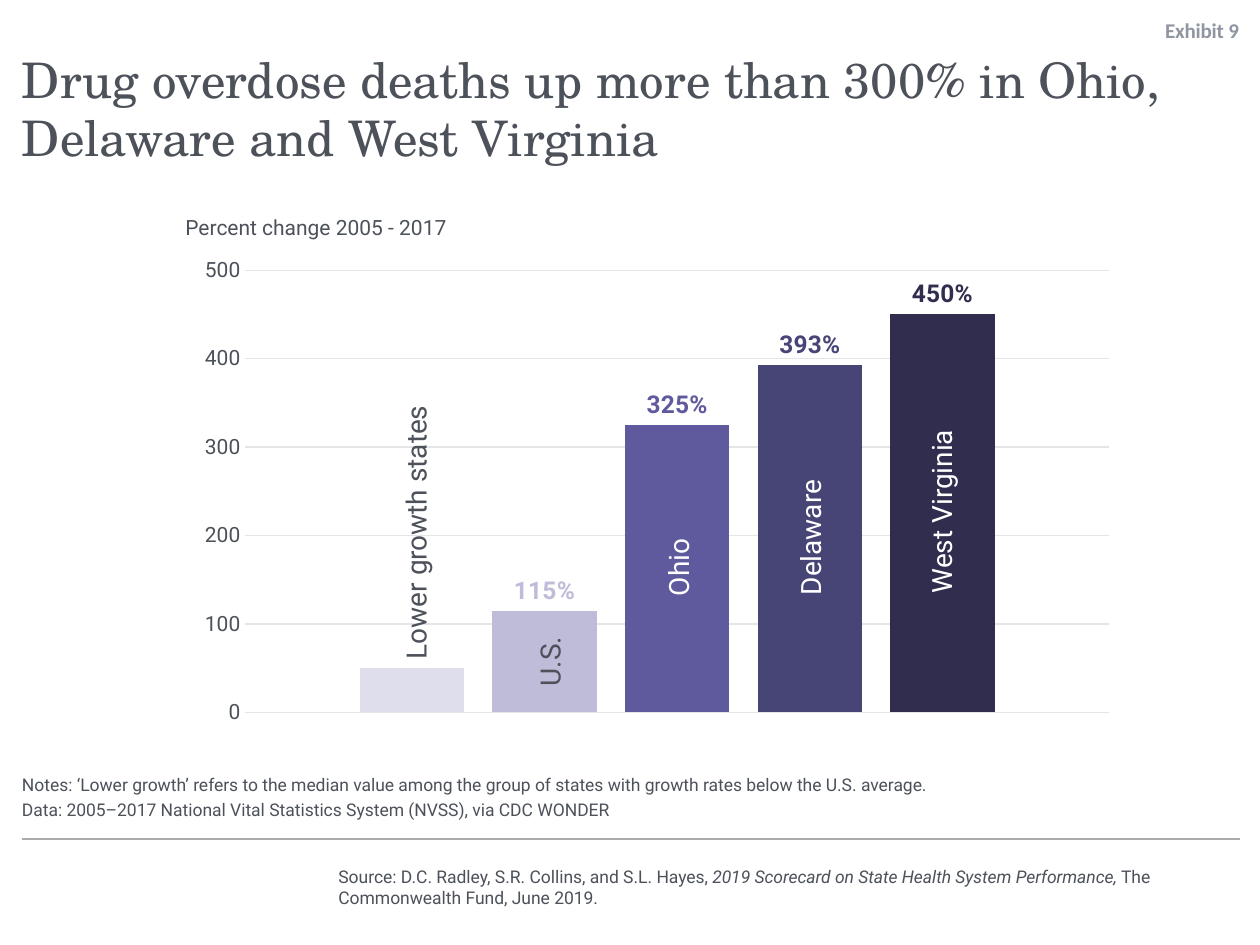
from dataclasses import dataclass

from lxml.etree import SubElement
from pptx import Presentation
from pptx.chart.data import CategoryChartData
from pptx.dml.color import RGBColor
from pptx.enum.chart import XL_CHART_TYPE as ChartType
from pptx.enum.chart import XL_LABEL_POSITION as LabelPosition
from pptx.enum.chart import XL_TICK_MARK as TickMark
from pptx.enum.shapes import MSO_CONNECTOR as Connector
from pptx.enum.text import MSO_ANCHOR as Anchor
from pptx.enum.text import PP_ALIGN as Align
from pptx.oxml.ns import qn
from pptx.util import Emu, Pt

PX_PER_INCH = 126
INK = "4C515A"
WHITE = "FFFFFF"
BODY_FONT = "Roboto"


@dataclass(frozen=True)
class Box:
    left: int
    top: int
    width: int
    height: int


@dataclass(frozen=True)
class Style:
    size: int
    color: str = INK
    font: str = BODY_FONT
    bold: bool = False
    spacing: int = 0  # hundredths of a point


@dataclass(frozen=True)
class Bar:
    value: int
    color: str
    labelled: bool = True


@dataclass(frozen=True)
class BarName:
    text: str
    box: Box
    color: str = WHITE
    align: Align = Align.CENTER


BARS = [
    Bar(50, "DFDEEC", labelled=False),
    Bar(115, "BEBCD9"),
    Bar(325, "5F5A9D"),
    Bar(393, "474476"),
    Bar(450, "302D4E"),
]
BAR_NAMES = [
    BarName("Delaware", Box(636, 514, 349, 47)),
    BarName("West Virginia", Box(741, 488, 401, 47)),
    BarName("U.S.", Box(499, 638, 102, 47), INK),
    BarName("Ohio", Box(534, 544, 289, 47)),
    BarName("Lower growth states", Box(261, 493, 310, 47), INK, Align.LEFT),
]


def px(length: int) -> Emu:
    return Emu(round(length * 914400 / PX_PER_INCH))


def rgb(color: str) -> RGBColor:
    return RGBColor.from_string(color)


def style_font(font, style: Style) -> None:
    font.size = Pt(style.size)
    font.name = style.font
    font.bold = style.bold
    font.color.rgb = rgb(style.color)


def add_text(slide, box: Box, paragraphs, style: Style, align=Align.LEFT,
             anchor=Anchor.TOP, inset=True, gap=0, rotation=0) -> None:
    """Add a text box; each paragraph is a list of (text, italic) runs."""
    shape = slide.shapes.add_textbox(
        px(box.left), px(box.top), px(box.width), px(box.height))
    shape.rotation = rotation
    frame = shape.text_frame
    frame.word_wrap = True
    frame.vertical_anchor = anchor
    if not inset:
        frame.margin_left = frame.margin_right = 0
        frame.margin_top = frame.margin_bottom = 0
    for index, runs in enumerate(paragraphs):
        paragraph = frame.add_paragraph() if index else frame.paragraphs[0]
        paragraph.alignment = align
        paragraph.space_before = Pt(gap if index else 0)
        for text, italic in runs:
            run = paragraph.add_run()
            run.text = text
            style_font(run.font, style)
            run.font.italic = italic
            if style.spacing:
                run.font._element.set("spc", str(style.spacing))


def add_rule(slide, left: int, right: int, y: int) -> None:
    rule = slide.shapes.add_connector(
        Connector.STRAIGHT, px(right), px(y), px(left), px(y))
    rule.line.color.rgb = rgb("ABABAB")
    rule.line.width = Pt(0.75)
    SubElement(rule._element.spPr, qn("a:effectLst"))


def fix_plot_area(chart, **fractions: float) -> None:
    """Set the inner plot area as fractions of the chart frame."""
    plot_area = chart._chartSpace.chart.plotArea
    layout = plot_area.find(qn("c:layout"))
    if layout is None:
        layout = SubElement(plot_area, qn("c:layout"))
        plot_area.insert(0, layout)
    manual = SubElement(layout, qn("c:manualLayout"))
    settings = {"layoutTarget": "inner", "xMode": "edge", "yMode": "edge", **fractions}
    for tag, value in settings.items():
        SubElement(manual, qn(f"c:{tag}")).set("val", str(value))


def add_bar_chart(slide, box: Box, bars: list[Bar]) -> None:
    data = CategoryChartData()
    data.categories = ["1"]
    for number, bar in enumerate(bars, 1):
        data.add_series(f"Series {number}", [bar.value])
    chart = slide.shapes.add_chart(
        ChartType.COLUMN_CLUSTERED, px(box.left), px(box.top),
        px(box.width), px(box.height), data).chart
    chart.has_legend = False
    chart.has_title = False
    style_font(chart.font, Style(10))
    fix_plot_area(chart, x=0.06, y=0.05, w=0.92, h=0.91)

    chart.category_axis.visible = False
    axis = chart.value_axis
    axis.minimum_scale, axis.maximum_scale, axis.major_unit = 0, 500, 100
    axis.major_tick_mark = axis.minor_tick_mark = TickMark.NONE
    axis.format.line.fill.background()
    axis.major_gridlines.format.line.color.rgb = rgb("E3E5E7")
    axis.major_gridlines.format.line.width = Pt(0.75)
    style_font(axis.tick_labels.font, Style(12))

    plot = chart.plots[0]
    plot.vary_by_categories = False
    plot.gap_width, plot.overlap = 219, -27
    for series, bar in zip(plot.series, bars):
        series.format.fill.solid()
        series.format.fill.fore_color.rgb = rgb(bar.color)
        if bar.labelled:
            labels = series.data_labels
            labels.show_value = True
            labels.position = LabelPosition.OUTSIDE_END
            labels.number_format = '0"%"'
            labels.number_format_is_linked = False
            style_font(labels.font, Style(14, bar.color, bold=True))


def main() -> None:
    presentation = Presentation()
    presentation.slide_width = px(1260)
    presentation.slide_height = px(945)
    slide = presentation.slides.add_slide(presentation.slide_layouts[6])

    add_rule(slide, 22, 1240, 839)
    source = [("Source: D.C. Radley, S.R. Collins, and S.L. Hayes, ", False),
              ("2019 Scorecard on State Health System Performance, ", True),
              ("The Commonwealth Fund, June 2019.", False)]
    add_text(slide, Box(326, 859, 914, 56), [source], Style(10), anchor=Anchor.MIDDLE)
    title = "Drug overdose deaths up more than 300% in Ohio, Delaware and West Virginia"
    add_text(slide, Box(22, 49, 1218, 131), [[(title, False)]],
             Style(28, font="TeX Gyre Schola"), inset=False)
    notes = ["Notes: ‘Lower growth’ refers to the median value among the group of "
             "states with growth rates below the U.S. average.",
             "Data: 2005–2017 National Vital Statistics System (NVSS), via CDC WONDER"]
    add_text(slide, Box(22, 765, 1218, 55), [[(note, False)] for note in notes],
             Style(10), anchor=Anchor.BOTTOM, inset=False, gap=2)
    add_text(slide, Box(1003, 9, 236, 42), [[("Exhibit 9", False)]],
             Style(12, "8F95A1", "Calibri", bold=True, spacing=-10),
             align=Align.RIGHT, anchor=Anchor.MIDDLE, inset=False)

    add_bar_chart(slide, Box(189, 246, 939, 486), BARS)
    for name in BAR_NAMES:
        add_text(slide, name.box, [[(name.text, False)]], Style(16, name.color),
                 align=name.align, rotation=270)
    add_text(slide, Box(173, 208, 334, 38), [[("Percent change 2005 - 2017", False)]],
             Style(12))
    presentation.save("out.pptx")


if __name__ == "__main__":
    main()
